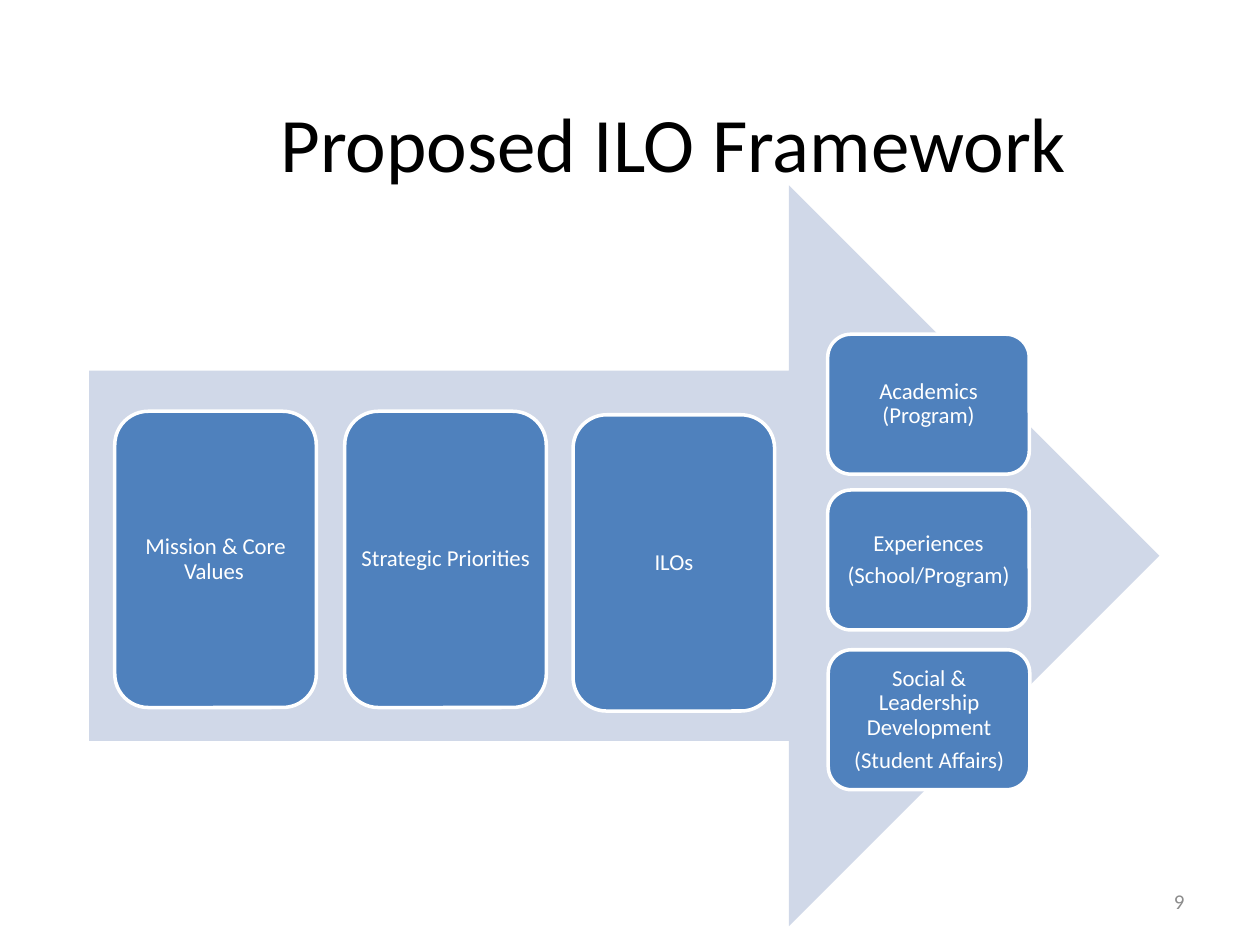
from dataclasses import dataclass

import pptx
import pptx.dml.color
import pptx.enum.shapes
import pptx.enum.text
import pptx.util

Pt = pptx.util.Pt
RGB = pptx.dml.color.RGBColor.from_string
Align = pptx.enum.text.PP_ALIGN
Preset = pptx.enum.shapes.MSO_SHAPE


@dataclass(frozen=True)
class Theme:
    font: str = "Calibri"
    title_color: str = "000000"
    number_color: str = "8C8C8C"
    arrow_color: str = "D0D8E8"
    card_color: str = "4F81BD"
    card_text: str = "FFFFFF"
    title_size: int = 44
    card_size: int = 13
    number_size: int = 12


THEME = Theme()
STAGE_SIZE = (115.2, 169.3)
OUTCOME_SIZE = (115.2, 80)
STAGES = [
    ((65.6, 235), ["Mission & Core Values\t"]),
    ((197, 235), ["Strategic Priorities"]),
    ((327.5, 237), ["ILOs"]),
]
OUTCOMES = [
    ((473, 191), ["Academics (Program)"]),
    ((473, 280), ["Experiences", "(School/Program)"]),
    ((473.3, 371.3), ["Social & Leadership Development", "(Student Affairs)"]),
]
CARD_SPACING = {"line_spacing": 0.9, "space_after": Pt(4.55)}


def set_all(target, values):
    for name, value in values.items():
        setattr(target, name, value)


def write(frame, lines, size, color, align, spacing=None):
    set_all(frame, {"word_wrap": True,
                    "vertical_anchor": pptx.enum.text.MSO_ANCHOR.MIDDLE})
    for index, line in enumerate(lines):
        paragraph = frame.add_paragraph() if index else frame.paragraphs[0]
        set_all(paragraph, {"alignment": align, **(spacing or {})})
        run = paragraph.add_run()
        run.text = line
        set_all(run.font, {"name": THEME.font, "size": Pt(size)})
        run.font.color.rgb = RGB(color)


def add_label(slide, box, text, size, color, align):
    label = slide.shapes.add_textbox(*map(Pt, box))
    write(label.text_frame, [text], size, color, align)


def add_filled(slide, preset, box, color):
    shape = slide.shapes.add_shape(preset, *map(Pt, box))
    shape.shadow.inherit = False
    shape.fill.solid()
    shape.fill.fore_color.rgb = RGB(color)
    shape.line.fill.background()
    return shape


def add_card(slide, position, size, lines):
    card = add_filled(slide, Preset.ROUNDED_RECTANGLE, position + size,
                      THEME.card_color)
    card.line.color.rgb = RGB(THEME.card_text)
    card.line.width = Pt(2)
    sides = ("left", "top", "right", "bottom")
    set_all(card.text_frame, {f"margin_{side}": Pt(3.6) for side in sides})
    write(card.text_frame, lines, THEME.card_size, THEME.card_text,
          Align.CENTER, CARD_SPACING)


def main():
    deck = pptx.Presentation()
    set_all(deck, {"slide_width": Pt(720), "slide_height": Pt(540)})
    slide = deck.slides.add_slide(deck.slide_layouts[6])

    add_label(slide, (61, 36, 648, 90), "Proposed ILO Framework",
              THEME.title_size, THEME.title_color, Align.CENTER)
    add_label(slide, (516, 500.5, 168, 28.75), "9",
              THEME.number_size, THEME.number_color, Align.RIGHT)
    add_filled(slide, Preset.RIGHT_ARROW, (51, 106, 611.5, 423.2),
               THEME.arrow_color)
    for size, cards in ((STAGE_SIZE, STAGES), (OUTCOME_SIZE, OUTCOMES)):
        for position, lines in cards:
            add_card(slide, position, size, lines)

    deck.save("out.pptx")


if __name__ == "__main__":
    main()
